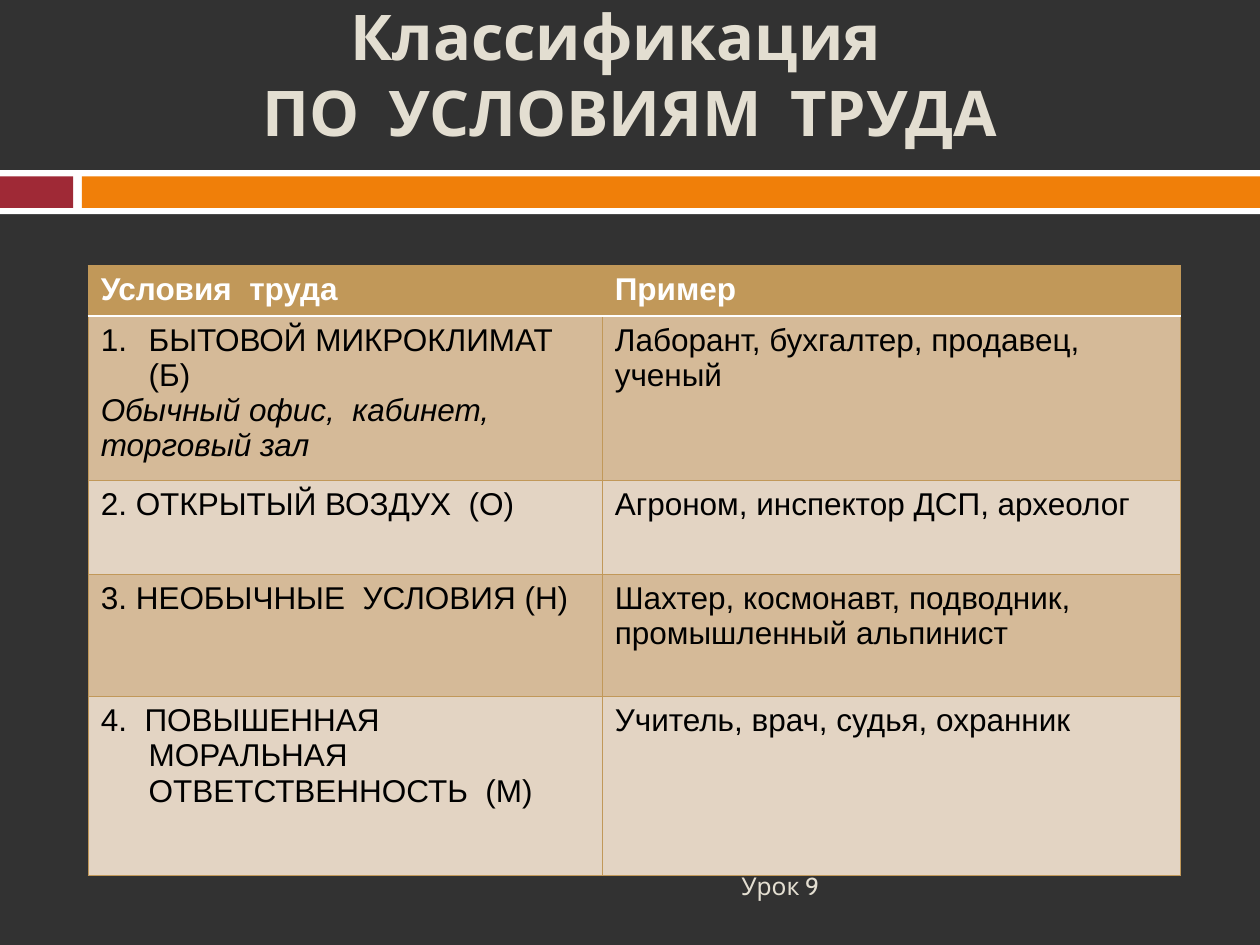
from lxml import etree
from pptx import Presentation
from pptx.dml.color import RGBColor
from pptx.enum.shapes import MSO_SHAPE
from pptx.enum.text import MSO_ANCHOR, PP_ALIGN
from pptx.oxml.ns import qn
from pptx.util import Inches, Pt

RECTANGLE = MSO_SHAPE.RECTANGLE
MIDDLE = MSO_ANCHOR.MIDDLE
CENTER, RIGHT = PP_ALIGN.CENTER, PP_ALIGN.RIGHT
GOLD, WHITE, CREAM = "C19859", "FFFFFF", "E3DED1"
BANDS = ["D5BA98", "E3D4C3"]


def color(value):
    return RGBColor.from_string(value)


def add_border(cell, side, value, points, position):
    line = etree.Element(qn(f"a:ln{side}"), w=str(Pt(points)))
    solid = etree.SubElement(line, qn("a:solidFill"))
    etree.SubElement(solid, qn("a:srgbClr"), val=value)
    cell._tc.get_or_add_tcPr().insert(position, line)


prs = Presentation()
prs.slide_width, prs.slide_height = Inches(10), Inches(7.5)
slide = prs.slides.add_slide(prs.slide_layouts[6])
slide.background.fill.solid()
slide.background.fill.fore_color.rgb = color("323232")

for left, top, width, height, fill in [
    (0, 1.35, 10, 0.35, WHITE),
    (0, 1.4, 0.58, 0.25, "9F2936"),
    (0.65, 1.4, 9.35, 0.25, "F07F09"),
]:
    stripe = slide.shapes.add_shape(
        RECTANGLE, Inches(left), Inches(top), Inches(width), Inches(height))
    stripe.shadow.inherit = False
    stripe.fill.solid()
    stripe.fill.fore_color.rgb = color(fill)
    stripe.line.fill.background()

for left, top, width, height, words, size, bold, align in [
    (0, 0.23, 10, 0.7, "Классификация  \vПО  УСЛОВИЯМ  ТРУДА", 36, True, CENTER),
    (0.67, 6.83, 5.93, 0.4, "Урок 9", 14, False, RIGHT),
]:
    caption = slide.shapes.add_textbox(
        Inches(left), Inches(top), Inches(width), Inches(height)).text_frame
    caption.word_wrap = True
    caption.vertical_anchor = MIDDLE
    caption.text = words
    paragraph = caption.paragraphs[0]
    paragraph.alignment = align
    paragraph.font.name = "Cabin"
    paragraph.font.size = Pt(size)
    paragraph.font.bold = bold
    paragraph.font.color.rgb = color(CREAM)

conditions = [
    ("Условия  труда", "Пример"),
    ("БЫТОВОЙ МИКРОКЛИМАТ  (Б)\nОбычный офис,  кабинет,\nторговый зал",
     "Лаборант, бухгалтер, продавец, ученый"),
    ("2. ОТКРЫТЫЙ ВОЗДУХ  (О)", "Агроном, инспектор ДСП, археолог"),
    ("3. НЕОБЫЧНЫЕ  УСЛОВИЯ (Н)",
     "Шахтер, космонавт, подводник, промышленный альпинист"),
    ("4.  ПОВЫШЕННАЯ  МОРАЛЬНАЯ  ОТВЕТСТВЕННОСТЬ  (М)",
     "Учитель, врач, судья, охранник"),
]
table = slide.shapes.add_table(
    len(conditions), 2, Inches(0.7), Inches(2.11), Inches(8.67), Inches(4.74)).table
table.horz_banding = False
for column, width in zip(table.columns, [4.08, 4.59]):
    column.width = Inches(width)
for row, height in zip(table.rows, [0.39, 1.21, 0.75, 0.97, 1.42]):
    row.height = Inches(height)

for r, entries in enumerate(conditions):
    header = r == 0
    for c, words in enumerate(entries):
        cell = table.cell(r, c)
        cell.text = words
        cell.fill.solid()
        cell.fill.fore_color.rgb = color(GOLD if header else BANDS[(r - 1) % 2])
        for position, side in enumerate("LRTB"):
            divider = (r, side) in [(0, "B"), (1, "T")]
            add_border(cell, side, WHITE if divider else GOLD,
                       1.5 if divider else 0.79, position)
        for p, paragraph in enumerate(cell.text_frame.paragraphs):
            paragraph.font.name = "Arial"
            paragraph.font.size = Pt(18)
            paragraph.font.bold = header
            paragraph.font.italic = p > 0
            paragraph.font.color.rgb = color(WHITE if header else "000000")
            if c == 0 and not header:
                properties = paragraph._p.get_or_add_pPr()
                properties.set("marL", str(Inches(0.38)))
                properties.set("indent", str(-Inches(0.38)))

numbered = table.cell(1, 0).text_frame.paragraphs[0]._p.get_or_add_pPr()
numbering = etree.Element(qn("a:buAutoNum"), type="arabicPeriod")
numbered.insert(0, numbering)

prs.save("out.pptx")
